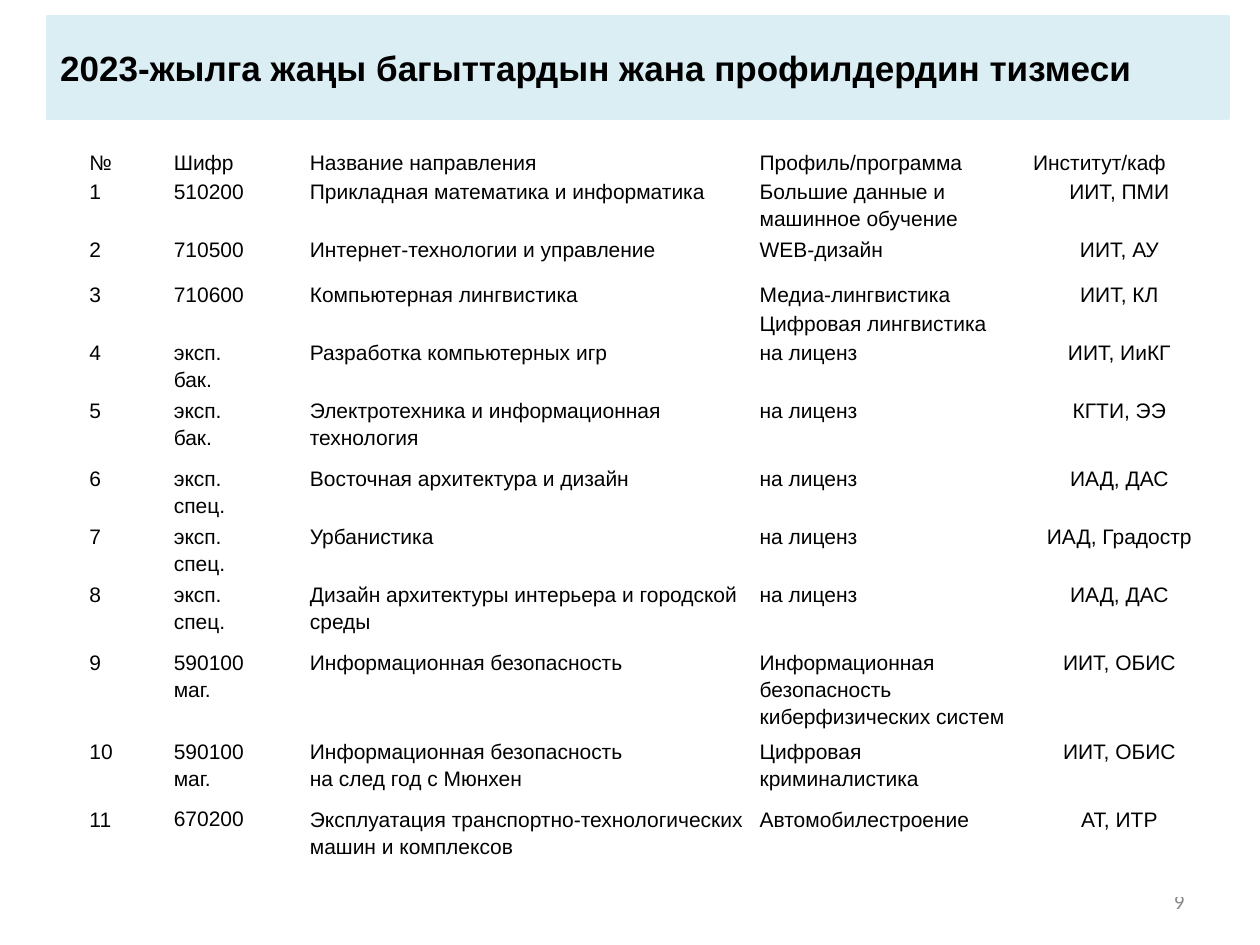
from pptx import Presentation
from pptx.dml.color import RGBColor
from pptx.enum.shapes import MSO_SHAPE
from pptx.enum.text import MSO_ANCHOR, PP_ALIGN
from pptx.util import Inches, Pt

COLORS = {"banner": "DAEEF3", "text": "000000", "number": "888888"}
COLUMN_WIDTHS = [0.67, 1.08, 3.57, 2.17, 1.49]
ROW_HEIGHTS = [0.18, 0.36, 0.36, 0.18, 0.18, 0.36, 0.54, 0.36, 0.36, 0.54, 0.71, 0.54, 0.72]
COLUMN_ALIGNMENTS = [PP_ALIGN.JUSTIFY, PP_ALIGN.JUSTIFY, PP_ALIGN.LEFT, PP_ALIGN.LEFT, PP_ALIGN.CENTER]
CELL_FORMAT = {"margin_left": Inches(0.06), "margin_right": Inches(0.06), "margin_top": 0, "margin_bottom": 0}
BODY_FONT = {"name": "Arial", "size": Pt(12)}
TITLE_FONT = {"name": "Arial", "size": Pt(20), "bold": True}
NUMBER_FONT = {"name": "Calibri", "size": Pt(12)}
BODY_PARAGRAPH = {"line_spacing": 1.15}
LAST_CODE_PARAGRAPH = {"alignment": PP_ALIGN.LEFT, "line_spacing": Pt(14.6), "space_after": Pt(12)}

PROGRAMS = [
    ("№", "Шифр", "Название направления", "Профиль/программа", "Институт/каф"),
    ("1", "510200", "Прикладная математика и информатика", "Большие данные и машинное обучение", "ИИТ, ПМИ"),
    ("2", "710500", "Интернет-технологии и управление", "WEB-дизайн", "ИИТ, АУ"),
    ("3", "710600", "Компьютерная лингвистика", "Медиа-лингвистика", "ИИТ, КЛ"),
    (None, None, None, "Цифровая лингвистика", None),
    ("4", "эксп.\nбак.", "Разработка компьютерных игр", "на лиценз", "ИИТ, ИиКГ"),
    ("5", "эксп.\nбак.", "Электротехника и информационная технология", "на лиценз", "КГТИ, ЭЭ"),
    ("6", "эксп.\nспец.", "Восточная архитектура и дизайн", "на лиценз", "ИАД, ДАС"),
    ("7", "эксп.\nспец.", "Урбанистика", "на лиценз", "ИАД, Градостр"),
    ("8", "эксп.\nспец.", "Дизайн архитектуры интерьера и городской среды", "на лиценз", "ИАД, ДАС"),
    ("9", "590100\nмаг.", "Информационная безопасность",
     "Информационная безопасность киберфизических систем", "ИИТ, ОБИС"),
    ("10", "590100\nмаг.", "Информационная безопасность\nна след год с Мюнхен",
     "Цифровая криминалистика", "ИИТ, ОБИС"),
    ("11", "670200", "Эксплуатация транспортно-технологических машин и комплексов",
     "Автомобилестроение", "АТ, ИТР"),
]


def apply_format(target, values):
    """Set each named attribute on the target."""
    for name, value in values.items():
        setattr(target, name, value)


def write_text(frame, text, color, font, paragraph_format):
    """Fill a text frame with one formatted paragraph per line."""
    frame.text = text
    for para in frame.paragraphs:
        apply_format(para, paragraph_format)
        for span in para.runs:
            apply_format(span.font, font)
            span.font.color.rgb = RGBColor.from_string(COLORS[color])


def add_banner(page, box):
    """Place the title banner in the given box."""
    banner = page.shapes.add_shape(MSO_SHAPE.RECTANGLE, *box)
    banner.shadow.inherit = False
    banner.fill.solid()
    for paint in (banner.fill.fore_color, banner.line.color):
        paint.rgb = RGBColor.from_string(COLORS["banner"])
    banner.line.width = Pt(2)
    apply_format(banner.text_frame, {"word_wrap": True, "vertical_anchor": MSO_ANCHOR.MIDDLE})
    write_text(banner.text_frame, "2023-жылга жаңы багыттардын жана профилдердин тизмеси",
               "text", TITLE_FONT, {"alignment": PP_ALIGN.JUSTIFY})


def add_program_table(page, box):
    """Place the table of programs in the given box."""
    table = page.shapes.add_table(len(PROGRAMS), len(COLUMN_WIDTHS), *box).table
    apply_format(table, {"first_row": False, "horz_banding": False})
    for column, width in zip(table.columns, COLUMN_WIDTHS):
        column.width = Inches(width)
    for row, height in zip(table.rows, ROW_HEIGHTS):
        row.height = Inches(height)
    for row_index, program in enumerate(PROGRAMS):
        for column_index, text in enumerate(program):
            cell = table.cell(row_index, column_index)
            apply_format(cell, CELL_FORMAT)
            cell.fill.background()
            if text is None:
                table.cell(row_index - 1, column_index).merge(cell)
                continue
            alignment = COLUMN_ALIGNMENTS[column_index] if row_index else PP_ALIGN.JUSTIFY
            write_text(cell.text_frame, text, "text", BODY_FONT, {**BODY_PARAGRAPH, "alignment": alignment})
    apply_format(table.cell(len(PROGRAMS) - 1, 1).text_frame.paragraphs[0], LAST_CODE_PARAGRAPH)


def add_page_number(page, box):
    """Place the page number in the given box."""
    frame = page.shapes.add_textbox(*box).text_frame
    apply_format(frame, {"word_wrap": True, "vertical_anchor": MSO_ANCHOR.MIDDLE})
    write_text(frame, "9", "number", NUMBER_FONT, {"alignment": PP_ALIGN.RIGHT})


def main():
    """Build the slide and save the deck."""
    deck = Presentation()
    apply_format(deck, {"slide_width": Inches(10), "slide_height": Inches(7.5)})
    page = deck.slides.add_slide(deck.slide_layouts[6])
    add_page_number(page, (Inches(7.17), Inches(6.95), Inches(2.33), Inches(0.4)))
    add_program_table(page, (Inches(0.65), Inches(1.17), Inches(8.98), Inches(5.94)))
    add_banner(page, (Inches(0.38), Inches(0.13), Inches(9.37), Inches(0.81)))
    deck.save("out.pptx")


if __name__ == "__main__":
    main()
